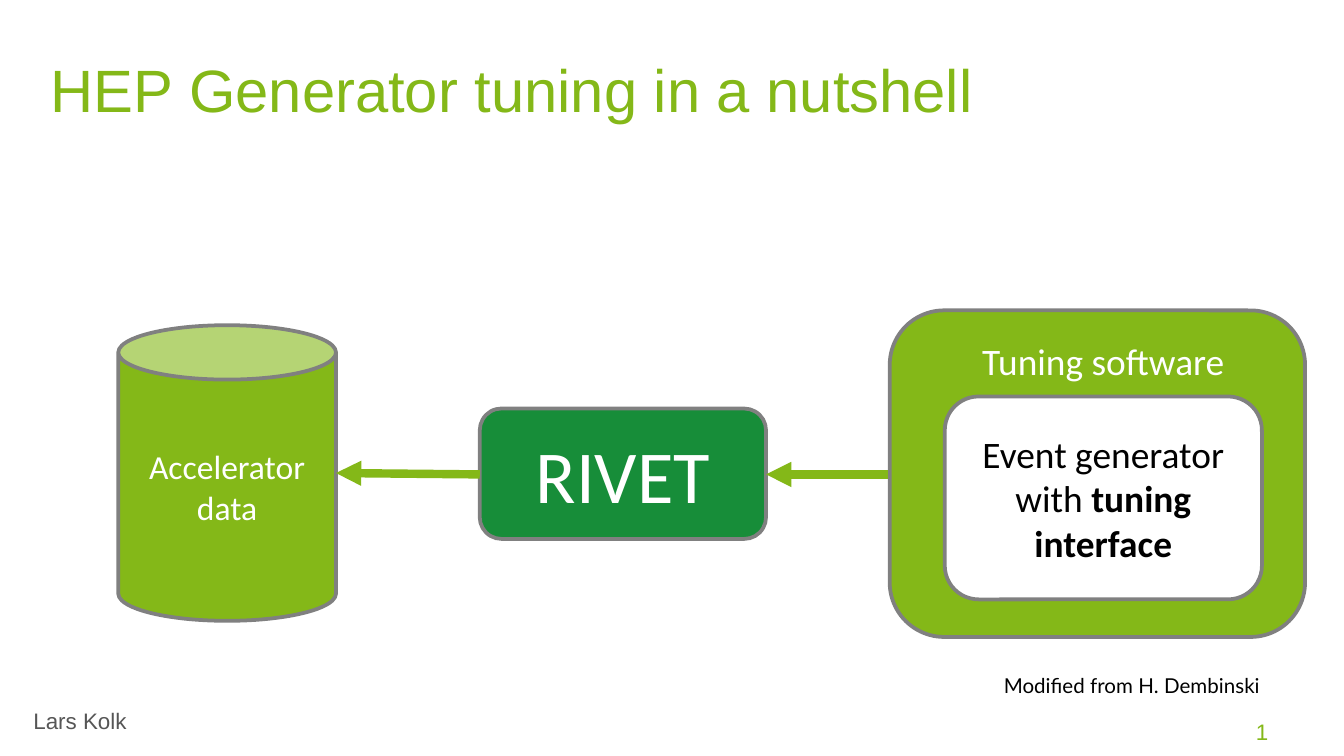
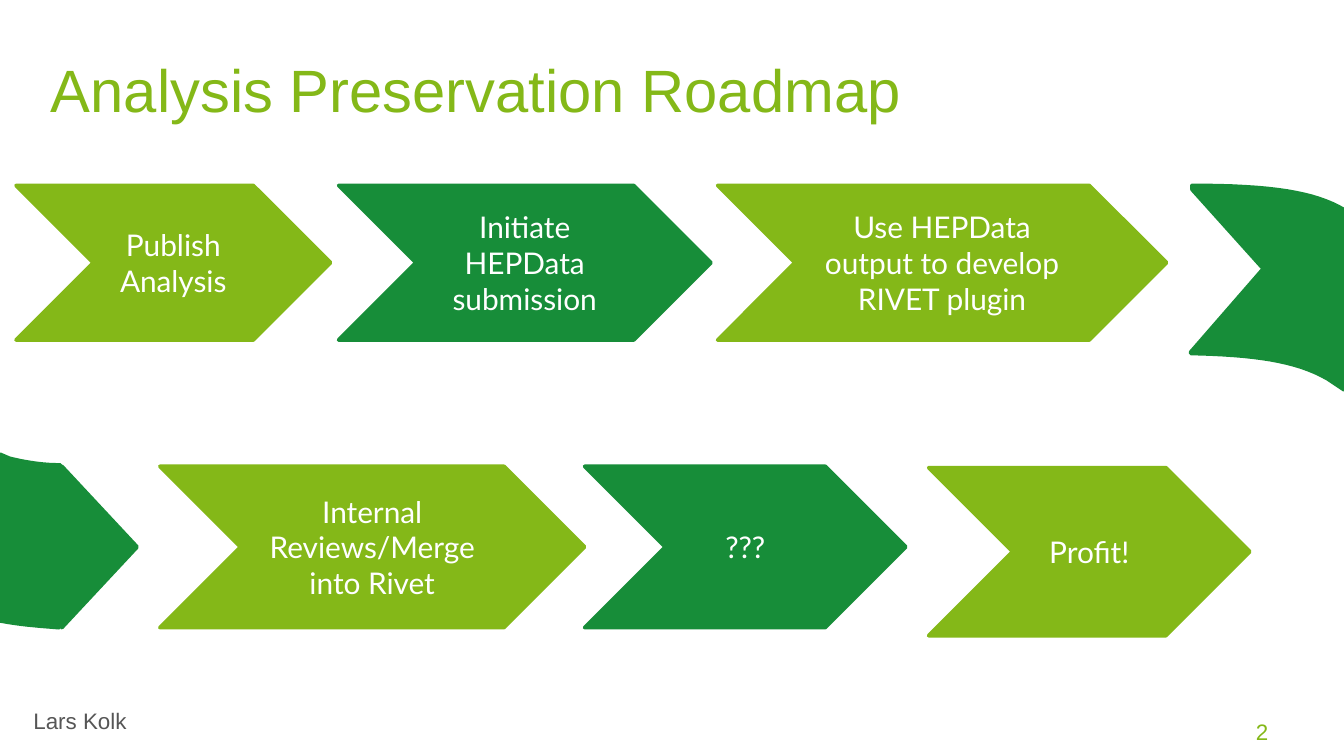
from lxml import etree
from pptx import Presentation
from pptx.dml.color import RGBColor
from pptx.enum.shapes import MSO_CONNECTOR, MSO_SHAPE
from pptx.enum.text import MSO_ANCHOR, PP_ALIGN
from pptx.oxml.ns import qn
from pptx.util import Inches, Pt

ROUND_RECT = MSO_SHAPE.ROUNDED_RECTANGLE
CAN = MSO_SHAPE.CAN
CHEVRON = MSO_SHAPE.CHEVRON
TRIANGLE = MSO_SHAPE.ISOSCELES_TRIANGLE
STRAIGHT = MSO_CONNECTOR.STRAIGHT
TOP, MIDDLE = MSO_ANCHOR.TOP, MSO_ANCHOR.MIDDLE
LEFT, CENTER = PP_ALIGN.LEFT, PP_ALIGN.CENTER

COLORS = {
    "lime": "84B818",
    "green": "178D39",
    "gray": "808080",
    "footer": "565656",
    "white": "FFFFFF",
    "black": "000000",
}
CURVE_STEPS = 16


def rgb(name):
    return RGBColor.from_string(COLORS[name])


def bezier(start, controls):
    points = [start, *zip(controls[::2], controls[1::2])]
    for i in range(1, CURVE_STEPS + 1):
        t = i / CURVE_STEPS
        weights = ((1 - t) ** 3, 3 * t * (1 - t) ** 2, 3 * t * t * (1 - t), t ** 3)
        yield tuple(sum(w * p[k] for w, p in zip(weights, points)) for k in (0, 1))


class Deck:
    def __init__(self):
        self.prs = Presentation()
        self.prs.slide_width = Inches(10)
        self.prs.slide_height = Inches(5.625)
        self.s = None

    def slide(self, title):
        self.s = self.prs.slides.add_slide(self.prs.slide_layouts[6])
        self.text((0.15, 5.21, 3.34, 0.28), "Lars Kolk", 12, "footer")
        self.text((0.28, 0.29, 9.45, 0.55), title, 32, "lime", inset_y=0.1)
        self.text((9.09, 5.33, 0.6, 0.23), str(len(self.prs.slides)), 12, "lime",
                  align=CENTER, anchor=MIDDLE)

    def fill_text(self, sp, runs, size, color, font, align, anchor, inset_y=0.05, wrap=True):
        tf = sp.text_frame
        tf.word_wrap = wrap
        tf.vertical_anchor = anchor
        tf.margin_left = tf.margin_right = Inches(0.1)
        tf.margin_top = tf.margin_bottom = Inches(inset_y)
        p = tf.paragraphs[0]
        p.alignment = align
        for text, bold in [(runs, False)] if isinstance(runs, str) else runs:
            r = p.add_run()
            r.text = text
            r.font.name = font
            r.font.size = Pt(size)
            r.font.bold = bold
            r.font.color.rgb = rgb(color)

    def text(self, box, runs, size, color, font="Arial", align=LEFT, anchor=TOP,
             inset_y=0.05, wrap=True):
        sp = self.s.shapes.add_textbox(*map(Inches, box))
        self.fill_text(sp, runs, size, color, font, align, anchor, inset_y, wrap)

    def paint(self, sp, fill, line):
        sp.shadow.inherit = False
        sp.fill.solid()
        sp.fill.fore_color.rgb = rgb(fill)
        sp.line.color.rgb = rgb(line)
        sp.line.width = Pt(2)

    def shape(self, kind, box, fill, line, runs="", size=16, color="white",
              font="Calibri", rotation=0):
        sp = self.s.shapes.add_shape(kind, *map(Inches, box))
        sp.rotation = rotation
        self.paint(sp, fill, line)
        if runs:
            self.fill_text(sp, runs, size, color, font, CENTER, MIDDLE)

    def outline(self, steps, color):
        points = steps[:1]
        for step in steps[1:]:
            points.extend([step] if len(step) == 2 else bezier(points[-1], step))
        points = [(Inches(x), Inches(y)) for x, y in points]
        fb = self.s.shapes.build_freeform(*points[0], scale=1.0)
        fb.add_line_segments(points[1:], close=True)
        self.paint(fb.convert_to_shape(), color, color)

    def arrow(self, start, end):
        cn = self.s.shapes.add_connector(STRAIGHT, *map(Inches, (*start, *end)))
        cn.line.color.rgb = rgb("lime")
        cn.line.width = Pt(4.5)
        sp_pr = cn._element.spPr
        etree.SubElement(sp_pr.find(qn("a:ln")), qn("a:tailEnd"), type="triangle")
        etree.SubElement(sp_pr, qn("a:effectLst"))


def tuning_slide(deck):
    deck.slide("HEP Generator tuning in a nutshell")
    deck.shape(ROUND_RECT, (6.62, 2.31, 3.09, 2.43), "lime", "gray")
    deck.shape(ROUND_RECT, (7.03, 2.95, 2.36, 1.51), "white", "gray",
               [("Event generator with ", False), ("tuning interface", True)], 20, "black")
    deck.text((7.21, 2.47, 2.11, 0.41), "Tuning software", 20, "white", "Calibri")
    deck.shape(ROUND_RECT, (3.57, 3.04, 2.13, 0.97), "green", "gray", "RIVET", 40)
    deck.shape(CAN, (0.88, 2.42, 1.62, 2.2), "lime", "gray", "Accelerator data", 18)
    deck.arrow((6.61, 3.53), (5.7, 3.53))
    deck.arrow((3.57, 3.53), (2.5, 3.52))
    deck.text((7.37, 4.96, 2.18, 0.29), "Modified from H. Dembinski", 11, "black",
              "Lato", wrap=False)


def roadmap_slide(deck):
    deck.slide("Analysis Preservation Roadmap")
    steps = [
        ((0.12, 1.38, 2.34, 1.15), "lime", "Publish Analysis"),
        ((2.52, 1.38, 2.77, 1.15), "green", "Initiate HEPData submission"),
        ((5.34, 1.38, 3.34, 1.15), "lime", "Use HEPData output to develop RIVET plugin"),
        ((1.19, 3.47, 3.16, 1.2), "lime", "Internal Reviews/Merge into Rivet"),
        ((4.35, 3.47, 2.39, 1.2), "green", "???"),
        ((6.91, 3.48, 2.39, 1.25), "lime", "Profit!"),
    ]
    for box, color, label in steps:
        deck.shape(CHEVRON, box, color, color, label, font="Lato")
    band_out = [(8.87, 1.38), (9.46, 1.38, 9.78, 1.43, 10, 1.56), (10, 2.9), (9.88, 2.82),
                (9.64, 2.68, 9.32, 2.64, 8.86, 2.63), (8.86, 2.62), (9.4, 2), (8.87, 1.41)]
    band_in = [(0, 3.38), (0.07, 3.41), (0.19, 3.44, 0.32, 3.46, 0.45, 3.46), (0.44, 4.67),
               (0.31, 4.66, 0.18, 4.65, 0.06, 4.63), (0, 4.62)]
    for band in (band_out, band_in):
        deck.outline(band, "green")
    deck.shape(TRIANGLE, (0.14, 3.79, 1.2, 0.56), "green", "green", rotation=90)


def main():
    deck = Deck()
    tuning_slide(deck)
    roadmap_slide(deck)
    deck.prs.save("out.pptx")


if __name__ == "__main__":
    main()
